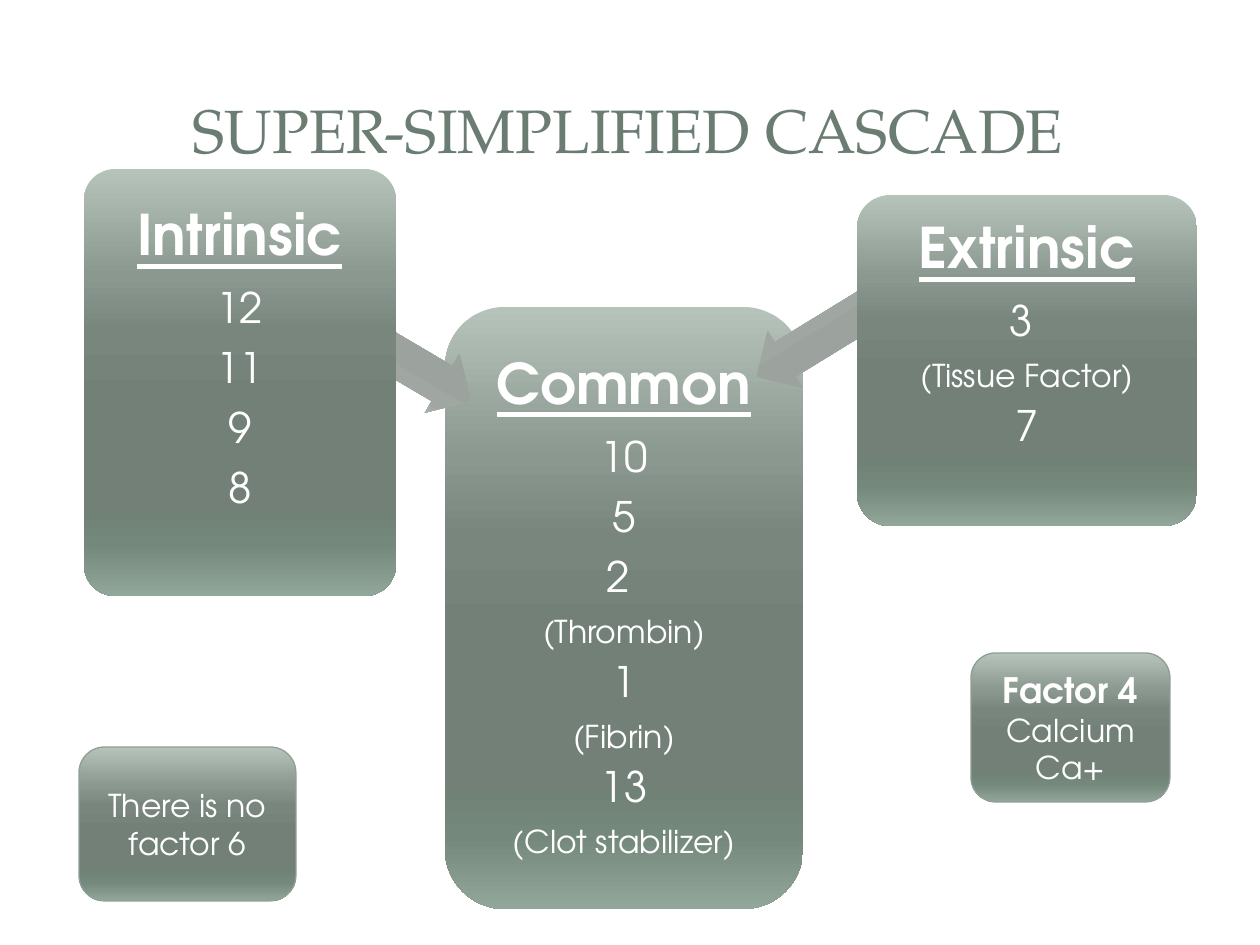
from lxml.etree import SubElement
from pptx import Presentation
from pptx.dml.color import RGBColor
from pptx.enum.shapes import MSO_SHAPE as SHAPE
from pptx.enum.text import MSO_ANCHOR as ANCHOR, PP_ALIGN as ALIGN
from pptx.oxml.ns import qn
from pptx.util import Emu, Pt

PX = 914400 / 126
WHITE = RGBColor(0xFF, 0xFF, 0xFF)
TITLE_GREEN = RGBColor(0x6B, 0x7D, 0x72)
EDGE_GREEN = RGBColor(0x8F, 0x9F, 0x96)
STOPS = (0, 25, 38, 55, 80, 88, 100)
CARD_SHADES = ("B6C3BB", "8B9890", "79867E", "728078", "708176", "75887C", "91A79A")
ARROW_SHADES = ("D7DEDA", "B7BDBA", "A0A6A2", "9CA29E", "9AA19D", "A2AAA5", "C7D0CA")
HEADING, FACTOR, REMARK = 32, 24, 18

prs = Presentation()
prs.slide_width, prs.slide_height = Emu(9144000), Emu(6858000)
slide = prs.slides.add_slide(prs.slide_layouts[6])


def add_shaded(kind, box, shades):
    """Add a shape with a top-to-bottom gradient and no outline."""
    shape = slide.shapes.add_shape(kind, *(Emu(round(n * PX)) for n in box))
    shape.shadow.inherit = False
    shape.line.fill.background()
    shape.fill.gradient()
    shape.fill.gradient_angle = 270
    stop_list = shape._element.spPr.find(qn("a:gradFill")).find(qn("a:gsLst"))
    for old_stop in list(stop_list):
        stop_list.remove(old_stop)
    for percent, shade in zip(STOPS, shades):
        stop = SubElement(stop_list, qn("a:gs"), pos=str(percent * 1000))
        SubElement(stop, qn("a:srgbClr"), val=shade)
    return shape


def write(frame, lines, color, face="TeX Gyre Adventor"):
    """Fill a text frame with centred (text, size, bold) lines."""
    frame.word_wrap = True
    frame.vertical_anchor = ANCHOR.MIDDLE
    for i, (text, size, bold) in enumerate(lines):
        paragraph = frame.paragraphs[0] if i == 0 else frame.add_paragraph()
        paragraph.text = text
        paragraph.alignment = ALIGN.CENTER
        font = paragraph.font
        font.name, font.size, font.bold = face, Pt(size), bold
        font.color.rgb = color


# Title
title = slide.shapes.add_textbox(*(Emu(round(n * PX)) for n in (59, 57, 1138, 144)))
write(title.text_frame, [("SUPER-SIMPLIFIED CASCADE", 35, False)], TITLE_GREEN,
      "TeX Gyre Pagella")

# Pathway cards: kind, box, corner, side margin, extra space below, lines
common = (SHAPE.FLOWCHART_ALTERNATE_PROCESS, (445, 307, 358, 602), None, 3, 0, [
    ("Common", HEADING), ("10", FACTOR), ("5", FACTOR), ("2 ", FACTOR),
    ("(Thrombin)", REMARK), ("1", FACTOR), ("(Fibrin)", REMARK),
    ("13", FACTOR), ("(Clot stabilizer)", REMARK)])
intrinsic = (SHAPE.ROUNDED_RECTANGLE, (84, 169, 312, 427), 0.1, 9, 45, [
    ("Intrinsic", HEADING), ("12", FACTOR), ("11", FACTOR), ("9", FACTOR),
    ("8", FACTOR)])
extrinsic = (SHAPE.ROUNDED_RECTANGLE, (857, 195, 340, 331), 0.1, 9, 50, [
    ("Extrinsic", HEADING), ("3 ", FACTOR), ("(Tissue Factor)", REMARK),
    ("7", FACTOR)])

for pathway in (common, intrinsic, extrinsic):
    kind, box, corner, margin, space_below, lines = pathway
    card = add_shaded(kind, box, CARD_SHADES)
    if corner:
        card.adjustments[0] = corner
    frame = card.text_frame
    frame.margin_left = frame.margin_right = frame.margin_top = Emu(round(margin * PX))
    frame.margin_bottom = Emu(round((margin + space_below) * PX))
    write(frame, [(text, size, size == HEADING) for text, size in lines], WHITE)
    for paragraph, (text, size) in zip(frame.paragraphs, lines):
        paragraph.line_spacing = 0.9
        paragraph.space_after = Pt(round(size * 0.35, 1))
        paragraph.font.underline = size == HEADING

    # Arrows into the common pathway, lying under the outer cards
    if pathway is common:
        for arrow_box, angle in (((355, 335, 125, 68), 210.5),
                                 ((743, 295, 185, 67), 328.5)):
            arrow = add_shaded(SHAPE.LEFT_ARROW, arrow_box, ARROW_SHADES)
            arrow.adjustments[0], arrow.adjustments[1] = 0.6, 0.5
            arrow.rotation = angle

# Side notes
for box, lines in (
    ((971, 653, 199, 149),
     [("Factor 4", 20, True), ("Calcium", 18, False), ("Ca+", 18, False)]),
    ((79, 747, 217, 154), [("There is no factor 6", 18, False)]),
):
    note = add_shaded(SHAPE.ROUNDED_RECTANGLE, box, CARD_SHADES)
    note.line.color.rgb = EDGE_GREEN
    note.line.width = Pt(0.75)
    write(note.text_frame, lines, WHITE)

prs.save("out.pptx")
